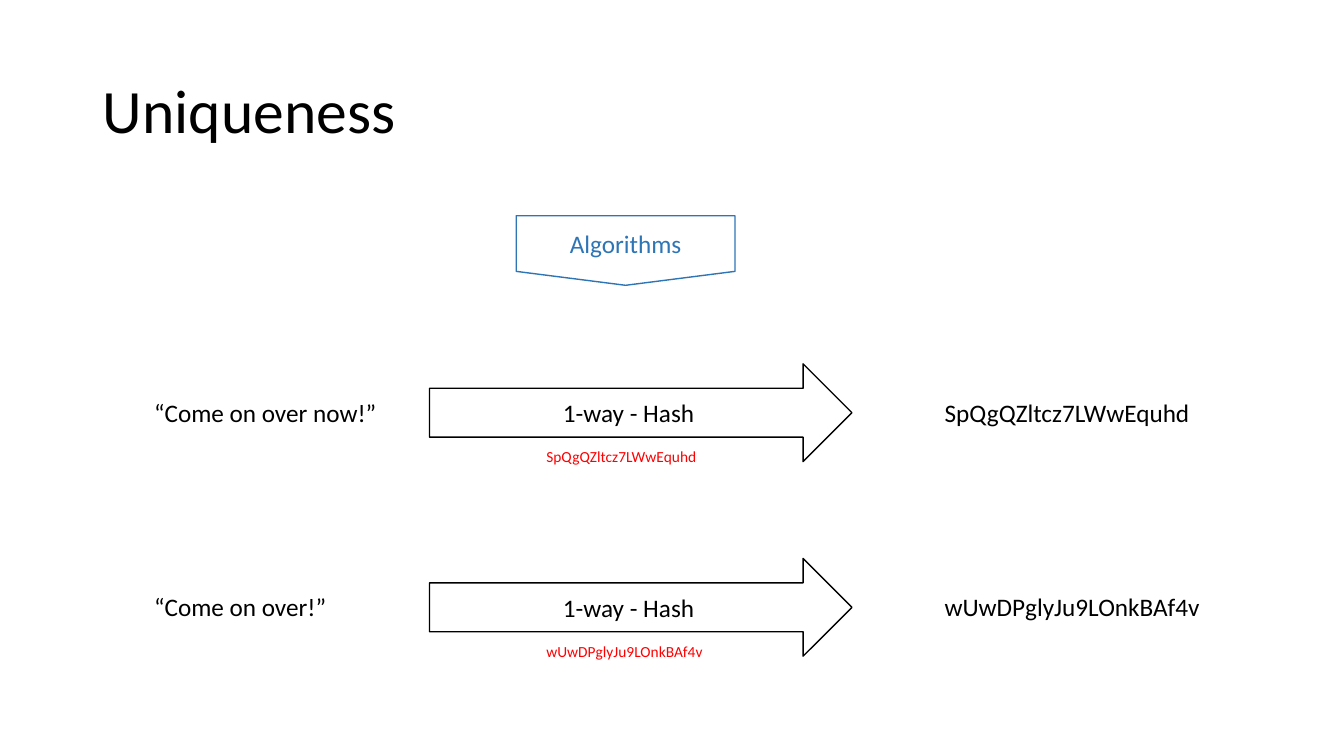
"""Build the "Uniqueness" slide: two messages pass through a one-way hash."""
from pptx import Presentation, util as u
from pptx.dml.color import RGBColor
from pptx.enum import shapes, text

COLORS = {"ink": "000000", "algorithm": "2E75B6", "hash": "FF0000"}
FIRST_ROW, ROW_PITCH = 3.61, 1.93
MESSAGE_LEFT, ARROW_LEFT, CAPTION_LEFT, HASH_LEFT = 1.43, 4.26, 5.32, 9.27
ROWS = [
    ("“Come on over now!”", 2.43, "SpQgQZltcz7LWwEquhd", 2.66, 1.7),
    ("“Come on over!”", 1.93, "wUwDPglyJu9LOnkBAf4v", 2.76, 1.77),
]


def write(shape, words, size, color, align, anchor, wrap):
    """Put one formatted line of text into a shape."""
    frame = shape.text_frame
    frame.text = words
    frame_format = {"word_wrap": wrap, "vertical_anchor": anchor, "auto_size": text.MSO_AUTO_SIZE.NONE}
    for name, value in frame_format.items():
        setattr(frame, name, value)
    paragraph = frame.paragraphs[0]
    paragraph.alignment = align
    font = paragraph.runs[0].font
    for name, value in {"name": "Calibri", "size": u.Pt(size)}.items():
        setattr(font, name, value)
    font.color.rgb = RGBColor.from_string(COLORS[color])


def add_outlined(slide, kind, box, words, color):
    """Add an unfilled preset shape with a centred label."""
    shape = slide.shapes.add_shape(kind, *map(u.Inches, box))
    shape.shadow.inherit = False
    shape.fill.background()
    shape.line.color.rgb = RGBColor.from_string(COLORS[color])
    shape.line.width = u.Pt(1)
    write(shape, words, 18, color, text.PP_ALIGN.CENTER, text.MSO_ANCHOR.MIDDLE, True)


presentation = Presentation()
presentation.slide_width, presentation.slide_height = u.Inches(13.33), u.Inches(7.5)
slide = presentation.slides.add_slide(presentation.slide_layouts[5])

title = slide.shapes.title
for name, value in {"left": 0.92, "top": 0.4, "width": 11.5, "height": 1.45}.items():
    setattr(title, name, u.Inches(value))
write(title, "Uniqueness", 44, "ink", text.PP_ALIGN.LEFT, text.MSO_ANCHOR.MIDDLE, True)
title.text_frame.paragraphs[0].line_spacing = 0.9

add_outlined(slide, shapes.MSO_SHAPE.FLOWCHART_OFFPAGE_CONNECTOR,
             (5.12, 2.14, 2.17, 0.69), "Algorithms", "algorithm")

for row, (message, message_width, digest, digest_width, caption_width) in enumerate(ROWS):
    top = FIRST_ROW + row * ROW_PITCH
    add_outlined(slide, shapes.MSO_SHAPE.RIGHT_ARROW,
                 (ARROW_LEFT, top, 4.19, 0.97), "1-way - Hash", "ink")
    labels = [
        (message, MESSAGE_LEFT, 0.28, message_width, 0.4, 18, "ink"),
        (digest, HASH_LEFT, 0.28, digest_width, 0.4, 18, "ink"),
        (digest, CAPTION_LEFT, 0.78, caption_width, 0.29, 11, "hash"),
    ]
    for words, left, offset, width, height, size, color in labels:
        box = slide.shapes.add_textbox(*map(u.Inches, (left, top + offset, width, height)))
        write(box, words, size, color, text.PP_ALIGN.LEFT, text.MSO_ANCHOR.TOP, False)
        box.text_frame.auto_size = text.MSO_AUTO_SIZE.SHAPE_TO_FIT_TEXT

presentation.save("out.pptx")
